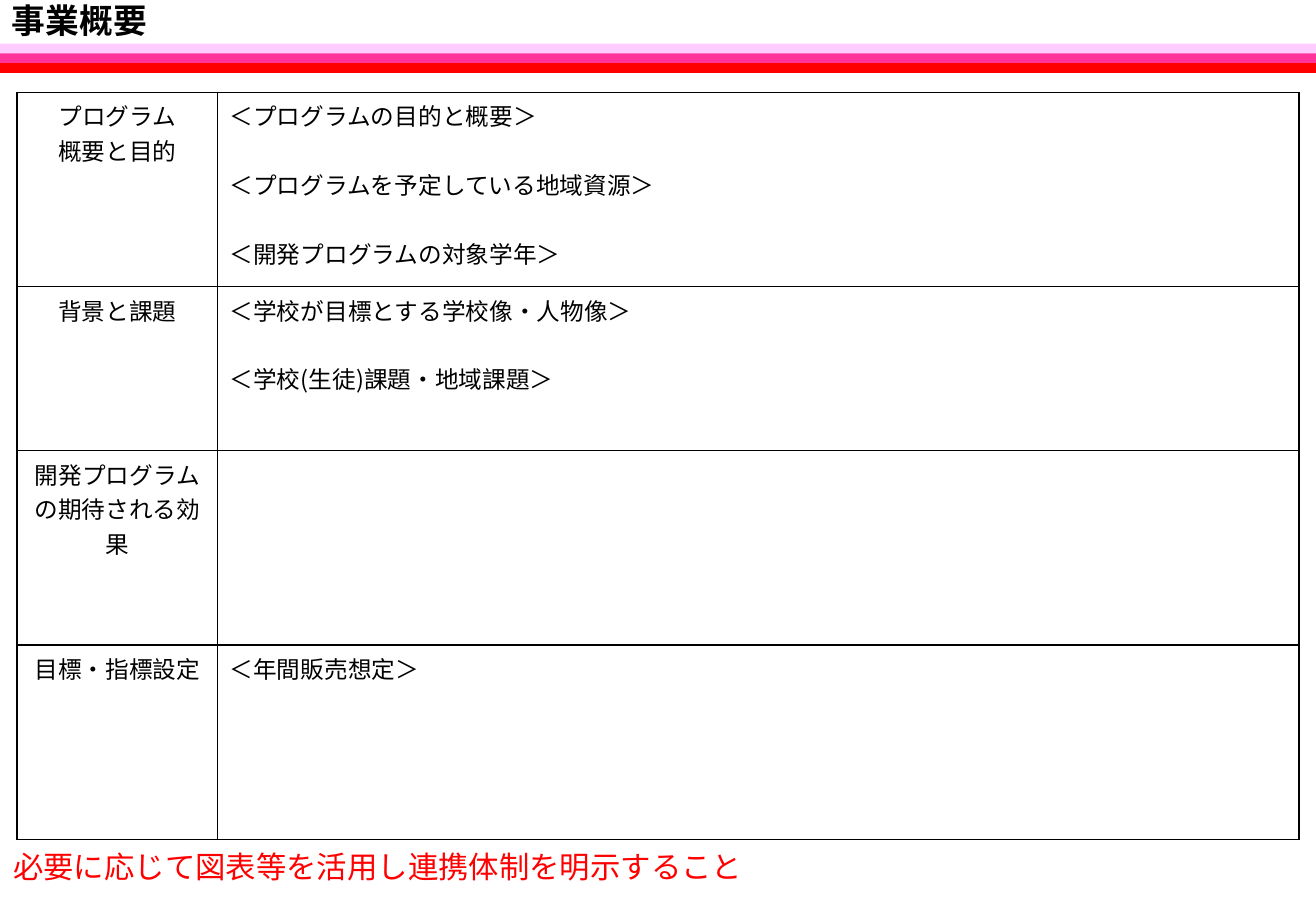
import pptx
import pptx.dml.color
import pptx.enum.shapes
import pptx.enum.text
import pptx.oxml
import pptx.oxml.ns
import pptx.util
from lxml import etree

WIDTH, HEIGHT = 10.83, 7.5
FONT = "Noto Sans CJK JP"
BLACK, RED = "000000", "FF0000"
BAND_TOP, BAND_HEIGHT = 0.36, 0.08
BAND_COLOURS = ["FFCCFF", "FF3399", RED]
COLUMNS = [1.65, 8.9]
LINE_GAP = 20.3  # one line of 14 pt text, in points
ROWS = [
    (1.6, ["プログラム", "概要と目的"],
     ["＜プログラムの目的と概要＞", "＜プログラムを予定している地域資源＞",
      "＜開発プログラムの対象学年＞"]),
    (1.35, ["背景と課題"],
     ["＜学校が目標とする学校像・人物像＞", "＜学校(生徒)課題・地域課題＞"]),
    (1.6, ["開発プログラムの期待される効果"], []),
    (1.6, ["目標・指標設定"], ["＜年間販売想定＞"]),
]


def inches(value):
    return pptx.util.Inches(value)


def colour(code):
    return pptx.dml.color.RGBColor.from_string(code)


def apply(target, values):
    for name, value in values.items():
        setattr(target, name, value)


def write(frame, lines, size, code=BLACK, bold=False, gap=0, align="LEFT"):
    for index, line in enumerate(lines):
        para = frame.paragraphs[0] if index == 0 else frame.add_paragraph()
        para.alignment = getattr(pptx.enum.text.PP_ALIGN, align)
        if index and gap:
            para.space_before = pptx.util.Pt(gap)
        span = para.add_run()
        span.text = line
        apply(span.font, {"name": FONT, "size": pptx.util.Pt(size), "bold": bold})
        span.font.color.rgb = colour(code)
        # East Asian text needs its own typeface entry
        east = etree.SubElement(span.font._element, pptx.oxml.ns.qn("a:ea"))
        east.set("typeface", FONT)


def add_text(page, left, top, width, height, line, **style):
    box = page.shapes.add_textbox(*map(inches, (left, top, width, height)))
    apply(box.text_frame, {"word_wrap": True, "margin_top": 0, "margin_bottom": 0})
    write(box.text_frame, [line], **style)


def add_band(page, top, code):
    band = page.shapes.add_shape(pptx.enum.shapes.MSO_SHAPE.RECTANGLE, 0,
                                 inches(top), inches(WIDTH), inches(BAND_HEIGHT))
    band.shadow.inherit = False
    band.fill.solid()
    band.fill.fore_color.rgb = colour(code)
    band.line.fill.background()


def add_borders(cell):
    properties = cell._tc.get_or_add_tcPr()
    for position, side in enumerate(["lnL", "lnR", "lnT", "lnB"]):
        properties.insert(position, pptx.oxml.parse_xml(
            f'<a:{side} {pptx.oxml.ns.nsdecls("a")} w="12700"><a:solidFill>'
            f'<a:srgbClr val="{BLACK}"/></a:solidFill></a:{side}>'))


def add_overview(page, left, top):
    height = sum(row[0] for row in ROWS)
    table = page.shapes.add_table(len(ROWS), len(COLUMNS), inches(left), inches(top),
                                  inches(sum(COLUMNS)), inches(height)).table
    apply(table, {"first_row": False, "horz_banding": False})
    for column, width in zip(table.columns, COLUMNS):
        column.width = inches(width)
    for index, (row_height, heading, items) in enumerate(ROWS):
        table.rows[index].height = inches(row_height)
        label, content = table.cell(index, 0), table.cell(index, 1)
        write(label.text_frame, heading, 14, align="CENTER")
        write(content.text_frame, items, 14, gap=LINE_GAP)
        for cell in (label, content):
            cell.fill.background()
            add_borders(cell)


def main():
    deck = pptx.Presentation()
    apply(deck, {"slide_width": inches(WIDTH), "slide_height": inches(HEIGHT)})
    page = deck.slides.add_slide(deck.slide_layouts[6])

    # Heading and coloured bands
    for index, code in enumerate(BAND_COLOURS):
        add_band(page, BAND_TOP + index * BAND_HEIGHT, code)
    add_text(page, 0, 0, 0.9 * WIDTH, 0.44, "事業概要", size=20, bold=True)

    # Overview table and the note under it
    add_overview(page, 0.14, 0.76)
    add_text(page, 0.01, 6.98, sum(COLUMNS), 0.4,
             "必要に応じて図表等を活用し連携体制を明示すること", size=18, code=RED)
    deck.save("out.pptx")


if __name__ == "__main__":
    main()
